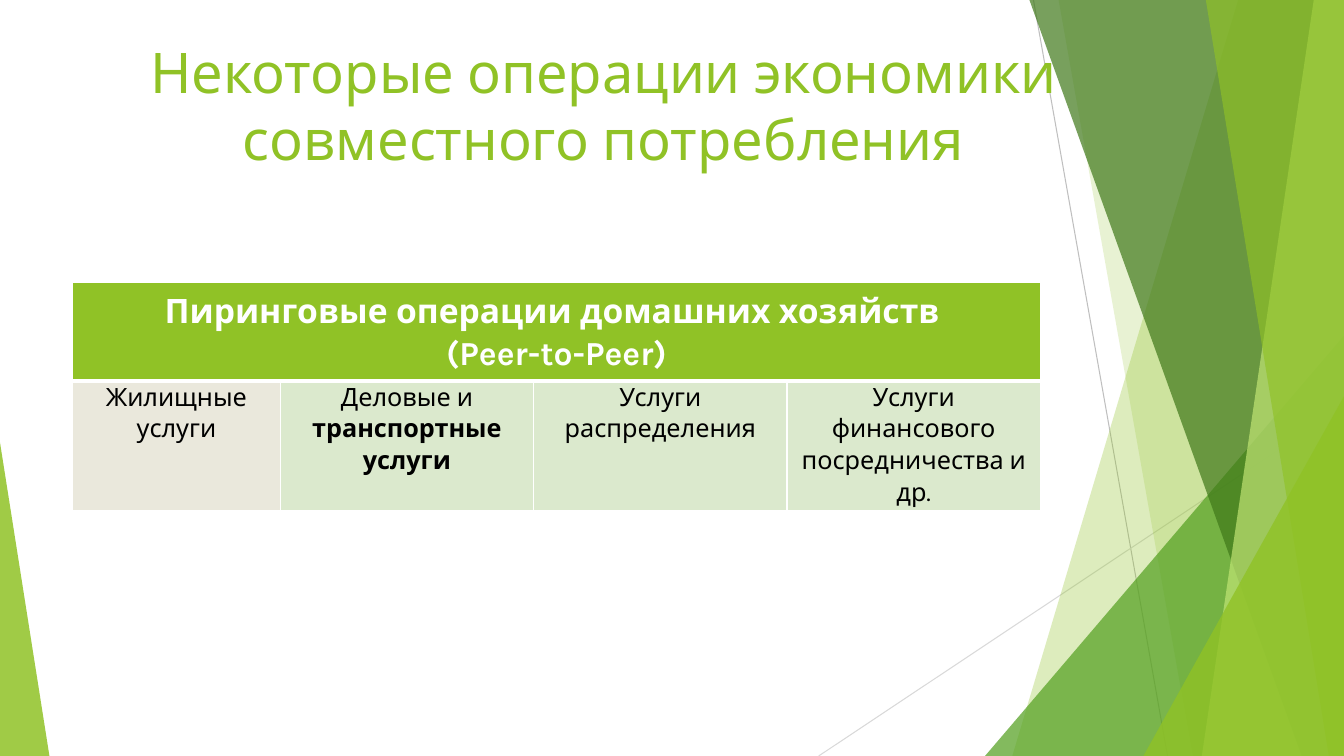
from lxml import etree
from pptx import Presentation
from pptx import util as u
from pptx.dml.color import RGBColor
from pptx.enum import shapes, text
from pptx.oxml import ns

WHITE = RGBColor(0xFF, 0xFF, 0xFF)
BLACK = RGBColor(0x00, 0x00, 0x00)
LIME = RGBColor(0x90, 0xC2, 0x26)
PALE_LIME = RGBColor(0xC0, 0xE4, 0x74)
GREEN = RGBColor(0x54, 0xA0, 0x21)
DARK_GREEN = RGBColor(0x3F, 0x78, 0x19)
GREY = RGBColor(0xBF, 0xBF, 0xBF)
LIGHT_GREY = RGBColor(0xD9, 0xD9, 0xD9)
SAND = RGBColor(0xEA, 0xE8, 0xDC)
MINT = RGBColor(0xDB, 0xE9, 0xCD)

FONT = "Karla"
WIDTH, HEIGHT = 13.33, 7.5
TITLE = "Некоторые операции экономики совместного потребления"
HEADING = ("Пиринговые операции домашних хозяйств ", "(Peer-to-Peer)")
SERVICES = [
    (SAND, [("Жилищные услуги", False)]),
    (MINT, [("Деловые и ", False), ("транспортные услуги", True)]),
    (MINT, [("Услуги распределения", False)]),
    (MINT, [("Услуги финансового посредничества и др.", False)]),
]


def apply_format(target, values):
    """Set every attribute named in values on the target."""
    for name, value in values.items():
        setattr(target, name, value)


def add_run(paragraph, wording, size, color, bold=False):
    """Append a formatted run to the paragraph."""
    run = paragraph.add_run()
    run.text = wording
    apply_format(run.font, {"name": FONT, "size": u.Pt(size), "bold": bold})
    run.font.color.rgb = color


def paint(facet, color, opacity):
    """Give a facet a translucent fill without outline or shadow."""
    facet.shadow.inherit = False
    facet.line.fill.background()
    facet.fill.solid()
    facet.fill.fore_color.rgb = color
    srgb = facet.fill._xPr.find(".//" + ns.qn("a:srgbClr"))
    etree.SubElement(srgb, ns.qn("a:alpha"), val=str(opacity * 1000))


def add_ray(slide, start, end, color):
    """Draw a thin straight line between two points."""
    ray = slide.shapes.add_connector(
        shapes.MSO_CONNECTOR.STRAIGHT, *map(u.Inches, (*start, *end)))
    ray.line.color.rgb = color
    ray.line.width = u.Pt(0.75)
    etree.SubElement(ray._element.spPr, ns.qn("a:effectLst"))


def add_band(slide, box, top_x, bottom_x, color, opacity):
    """Draw a band from a slanted left edge to the right side of the box."""
    left, top, width, height = box
    right, bottom = left + width, top + height
    corners = [(top_x, top), (right, top), (right, bottom), (bottom_x, bottom)]
    points = [(u.Inches(x), u.Inches(y)) for x, y in corners]
    outline = slide.shapes.build_freeform(*points[0], scale=1.0)
    outline.add_line_segments(points[1:], close=True)
    paint(outline.convert_to_shape(), color, opacity)


def add_wedge(slide, box, apex, color, opacity):
    """Draw a triangle whose apex lies at the given share of its width."""
    wedge = slide.shapes.add_shape(
        shapes.MSO_SHAPE.ISOSCELES_TRIANGLE, *map(u.Inches, box))
    wedge.adjustments[0] = apex
    paint(wedge, color, opacity)


def add_facets(slide, box):
    """Draw the layered green facets along the edges of the box."""
    left, top, width, height = box
    right, bottom = left + width, top + height
    add_ray(slide, (right - 3.08, top), (right - 1.75, bottom), GREY)
    add_ray(slide, (right, top + 4.03), (right - 5.21, bottom), LIGHT_GREY)
    facets = [
        (add_band, 1.05, 3.29, LIME, 30),
        (add_band, 2.83, 1.5, LIME, 20),
        (add_wedge, 3.56, 4.17, GREEN, 72),
        (add_band, 3.12, 0.42, DARK_GREEN, 70),
        (add_band, 0.3, 1.41, PALE_LIME, 70),
        (add_band, 1.37, 0.15, LIME, 65),
        (add_wedge, 1.99, 3.57, LIME, 80),
    ]
    for draw, first, second, color, opacity in facets:
        if draw is add_band:
            draw(slide, box, right - first, right - second, color, opacity)
        else:
            corner = (right - first, bottom - second, first, second)
            draw(slide, corner, 1, color, opacity)
    add_wedge(slide, (left, bottom - 3.11, 0.49, 3.11), 0, LIME, 85)


def add_title(slide, box):
    """Place the centred title at the bottom of the box."""
    frame = slide.shapes.add_textbox(*map(u.Inches, box)).text_frame
    apply_format(frame, {"word_wrap": True,
                         "vertical_anchor": text.MSO_ANCHOR.BOTTOM})
    heading = frame.paragraphs[0]
    heading.alignment = text.PP_ALIGN.CENTER
    add_run(heading, TITLE, 40, LIME)


def style_cell(cell, color, anchor, bottom_border=1):
    """Set the fill, margins, anchor and white borders of a cell."""
    apply_format(cell, {
        "margin_left": u.Inches(0.07), "margin_right": u.Inches(0.07),
        "margin_top": 0, "margin_bottom": 0, "vertical_anchor": anchor})
    properties = cell._tc.get_or_add_tcPr()
    borders = {"lnL": 1, "lnR": 1, "lnT": 1, "lnB": bottom_border}
    for side, points in borders.items():
        border = etree.SubElement(
            properties, ns.qn("a:" + side), w=str(u.Pt(points)))
        fill = etree.SubElement(border, ns.qn("a:solidFill"))
        etree.SubElement(fill, ns.qn("a:srgbClr"), val=str(WHITE))
    cell.fill.solid()
    cell.fill.fore_color.rgb = color


def add_operations(slide, box):
    """Place the table of household operations in the box."""
    table = slide.shapes.add_table(
        2, len(SERVICES), *map(u.Inches, box)).table
    first_width, header_height = 2.06, 0.98
    other_width = (box[2] - first_width) / (len(SERVICES) - 1)
    for index, column in enumerate(table.columns):
        column.width = u.Inches(other_width if index else first_width)
    table.rows[0].height = u.Inches(header_height)
    table.rows[1].height = u.Inches(box[3] - header_height)
    layout = {"alignment": text.PP_ALIGN.CENTER, "line_spacing": 1.07}

    header = table.cell(0, 0)
    header.merge(table.cell(0, len(SERVICES) - 1))
    for cell in table.rows[0].cells:
        style_cell(cell, LIME, text.MSO_ANCHOR.MIDDLE, 3)
    frame = header.text_frame
    for index, wording in enumerate(HEADING):
        line = frame.add_paragraph() if index else frame.paragraphs[0]
        apply_format(line, layout)
        add_run(line, wording, 24, WHITE, True)

    for cell, (color, parts) in zip(table.rows[1].cells, SERVICES):
        style_cell(cell, color, text.MSO_ANCHOR.TOP)
        service = cell.text_frame.paragraphs[0]
        apply_format(service, layout)
        for wording, bold in parts:
            add_run(service, wording, 18, BLACK, bold)


def main():
    """Build the slide and save it."""
    deck = Presentation()
    apply_format(deck, {"slide_width": u.Inches(WIDTH),
                        "slide_height": u.Inches(HEIGHT)})
    slide = deck.slides.add_slide(deck.slide_layouts[6])
    add_facets(slide, (0, 0, WIDTH, HEIGHT))
    add_title(slide, (0.91, 0.3, 10.15, 1.45))
    add_operations(slide, (0.72, 2.8, 9.6, 2.25))
    deck.save("out.pptx")


if __name__ == "__main__":
    main()
